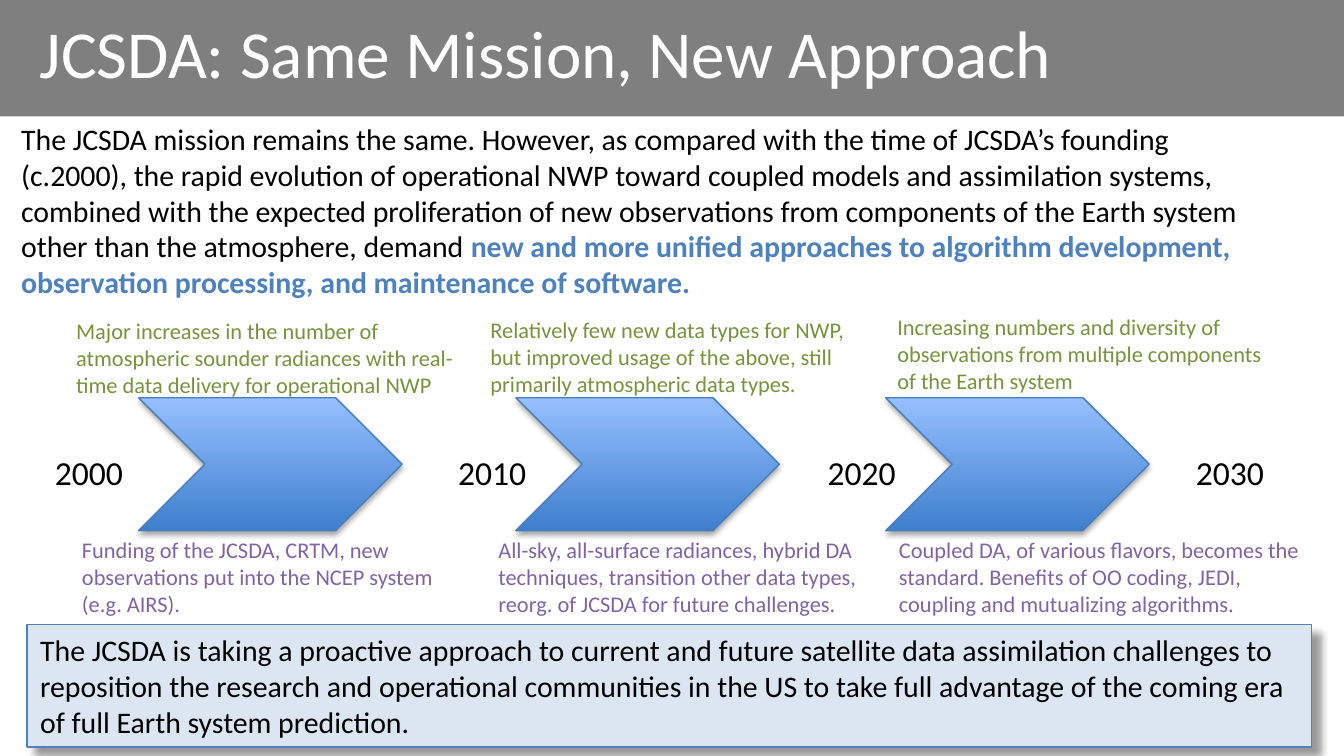
import pptx
import pptx.dml.color
import pptx.enum.shapes
import pptx.enum.text
import pptx.oxml
import pptx.oxml.ns
import pptx.util

Cm = pptx.util.Cm
Pt = pptx.util.Pt
SHAPE = pptx.enum.shapes.MSO_SHAPE
ANCHOR = pptx.enum.text.MSO_ANCHOR
qn = pptx.oxml.ns.qn
DRAWING_NS = "http://schemas.openxmlformats.org/drawingml/2006/main"

BLACK, WHITE, BLUE = "000000", "FFFFFF", "4F81BD"
GREEN, PURPLE = "77933C", "8064A2"


def rgb(value):
    return pptx.dml.color.RGBColor.from_string(value)


def element(xml):
    """Make a DrawingML element from '<a:tag .../>' markup."""
    tag_end = min(i for i in (xml.find(" "), xml.find("/>"), xml.find(">")) if i > 0)
    return pptx.oxml.parse_xml(f'{xml[:tag_end]} xmlns:a="{DRAWING_NS}"{xml[tag_end:]}')


def write(frame, *segments, size=16, color=BLACK, anchor=ANCHOR.TOP,
          inset=(0.25, 0.13)):
    """Fill a frame with one paragraph; a segment is text or (text, bold colour)."""
    frame.word_wrap = True
    frame.auto_size = pptx.enum.text.MSO_AUTO_SIZE.NONE
    frame.vertical_anchor = anchor
    frame.margin_left = frame.margin_right = Cm(inset[0])
    frame.margin_top = frame.margin_bottom = Cm(inset[1])
    paragraph = frame.paragraphs[0]
    properties = paragraph._p.get_or_add_pPr()
    properties.set("marL", "0")
    properties.set("indent", "0")
    properties.append(element("<a:buNone/>"))
    paragraph.alignment = pptx.enum.text.PP_ALIGN.LEFT
    paragraph.space_before = Pt(0)
    for segment in segments:
        words, accent = (segment, None) if isinstance(segment, str) else segment
        for number, line in enumerate(words.split("\n")):
            if number:
                paragraph.add_line_break()
            run = paragraph.add_run()
            run.text = line
            run.font.name = "Calibri"
            run.font.size = Pt(size)
            run.font.bold = bool(accent)
            run.font.color.rgb = rgb(accent or color)


class MissionSlide:
    def __init__(self, deck):
        self.slide = deck.slides.add_slide(deck.slide_layouts[1])
        self.shapes = self.slide.shapes

    def placeholder(self, index, box, *segments, **style):
        holder = self.slide.placeholders[index]
        holder.left, holder.top, holder.width, holder.height = map(Cm, box)
        write(holder.text_frame, *segments, **style)

    def text(self, box, words, **style):
        write(self.shapes.add_textbox(*map(Cm, box)).text_frame, words, **style)

    def block(self, kind, box, fill=None, line=None):
        shape = self.shapes.add_shape(kind, *map(Cm, box))
        shape.shadow.inherit = False
        if fill:
            shape.fill.solid()
            shape.fill.fore_color.rgb = rgb(fill)
        if line:
            shape.line.color.rgb = rgb(line)
            shape.line.width = Pt(0.75)
        else:
            shape.line.fill.background()
        return shape

    def shadow(self, shape, opacity, blur, distance, angle):
        effects = shape._element.spPr.find(qn("a:effectLst"))
        effects.append(element(
            f'<a:outerShdw blurRad="{Pt(blur)}" dist="{Pt(distance)}" '
            f'dir="{angle * 60000}" rotWithShape="0"><a:srgbClr val="{BLACK}">'
            f'<a:alpha val="{opacity * 1000}"/></a:srgbClr></a:outerShdw>'))

    def band(self, box):
        band = self.block(SHAPE.RECTANGLE, box, fill=BLACK)
        color = band._element.spPr.find(qn("a:solidFill"))[0]
        color.append(element('<a:alpha val="50000"/>'))
        # Send behind the title
        self.shapes._spTree.insert(2, band._element)

    def chevron(self, box):
        chevron = self.block(SHAPE.CHEVRON, box, line="4A7DBA")
        chevron.fill.gradient()
        chevron.fill.gradient_angle = 90
        for stop, color in zip(chevron.fill.gradient_stops, ("3E7FCD", "96C0FF")):
            stop.color.rgb = rgb(color)
        self.shadow(chevron, 35, 3.1, 1.8, 90)

    def banner(self, box, words):
        banner = self.block(SHAPE.RECTANGLE, box, fill="DCE6F2", line=BLUE)
        self.shadow(banner, 40, 4, 6, 45)
        write(banner.text_frame, words)


def main():
    deck = pptx.Presentation()
    deck.slide_width, deck.slide_height = Cm(25.4), Cm(14.29)
    page = MissionSlide(deck)

    # Title band and mission statement
    page.band((0, 0, 25.4, 2.2))
    page.placeholder(0, (0.5, 0, 21.2, 1.96), "JCSDA: Same Mission, New Approach",
                     size=36, color=WHITE, anchor=ANCHOR.MIDDLE)
    page.placeholder(
        1, (0.15, 2.03, 24.87, 8.86),
        "The JCSDA mission remains the same. However, as compared with the time of "
        "JCSDA’s founding\n(c.2000), the rapid evolution of operational NWP toward "
        "coupled models and assimilation systems, combined with the expected "
        "proliferation of new observations from components of the Earth system "
        "other than the atmosphere, demand ",
        ("new and more unified approaches to algorithm development, observation "
         "processing, and maintenance of software.", BLUE),
        inset=(0.25, 0.25))

    # Timeline
    for left in (2.62, 9.75, 16.74):
        page.chevron((left, 7.52, 4.98, 2.51))
    for year, left in ((2000, 0.79), (2010, 8.41), (2020, 15.39), (2030, 22.35)):
        page.text((left, 8.41, 2.46, 0.76), str(year), size=18)

    # Observations above the chevrons, developments below: left, top, width
    captions = (
        (GREEN, 1.19, 3.63, 7.82, "Major increases in the number of atmospheric "
         "sounder radiances with real-time data delivery for operational NWP"),
        (GREEN, 9.02, 3.61, 7.82, "Relatively few new data types for NWP, but "
         "improved usage of the above, still primarily atmospheric data types."),
        (GREEN, 16.71, 3.56, 7.75, "Increasing numbers and diversity of "
         "observations from multiple components of the Earth system"),
        (PURPLE, 1.3, 7.77, 7.67, "Funding of the JCSDA, CRTM, new observations "
         "put into the NCEP system (e.g. AIRS)."),
        (PURPLE, 9.17, 7.77, 7.42, "All-sky, all-surface radiances, hybrid DA "
         "techniques, transition other data types, reorg. of JCSDA for future "
         "challenges."),
        (PURPLE, 16.74, 7.77, 8.18, "Coupled DA, of various flavors, becomes the "
         "standard. Benefits of OO coding, JEDI, coupling and mutualizing "
         "algorithms."),
    )
    for color, left, top, width, words in captions:
        page.text((left, top, width, 6.25), words, size=12, color=color,
                  anchor=ANCHOR.MIDDLE, inset=(0.25, 0.25))

    # Conclusion
    page.banner(
        (0.51, 11.81, 24.28, 2.31),
        "The JCSDA is taking a proactive approach to current and future satellite "
        "data assimilation challenges to reposition the research and operational "
        "communities in the US to take full advantage of the coming era of full "
        "Earth system prediction.")

    deck.save("out.pptx")


if __name__ == "__main__":
    main()
